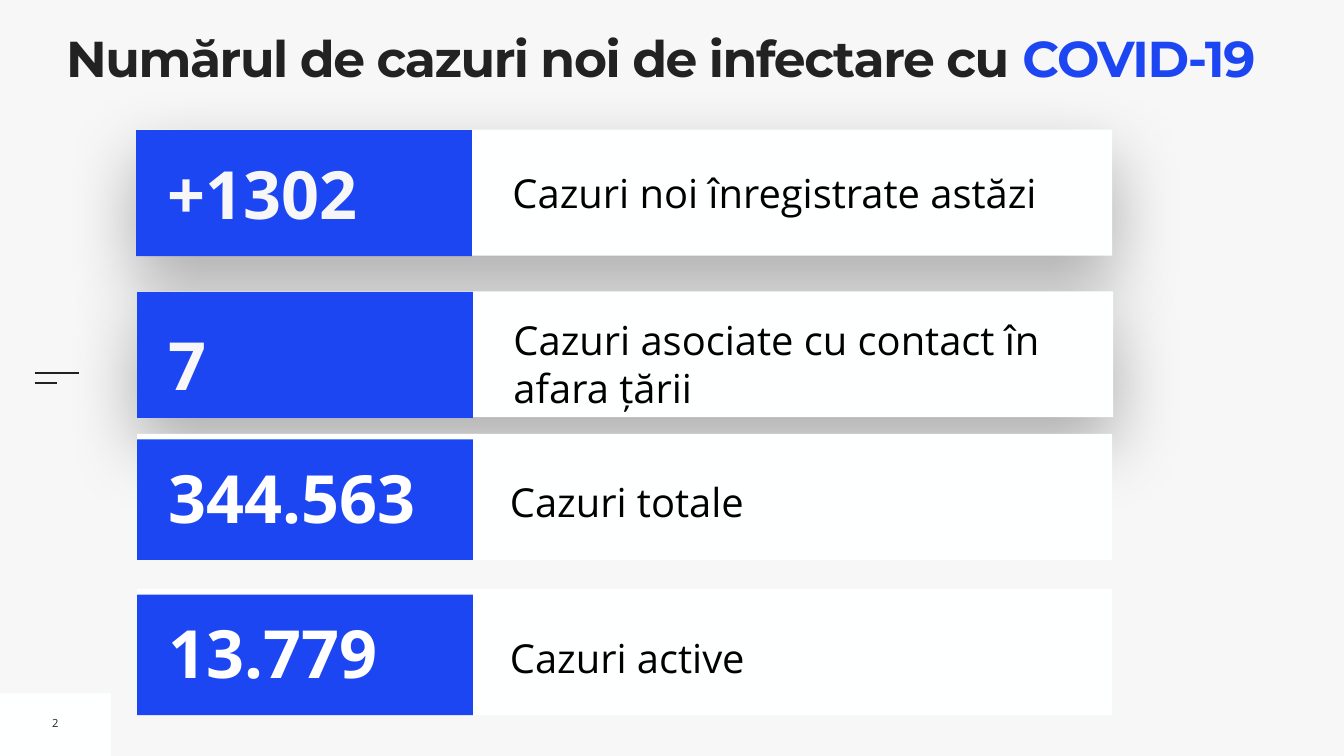
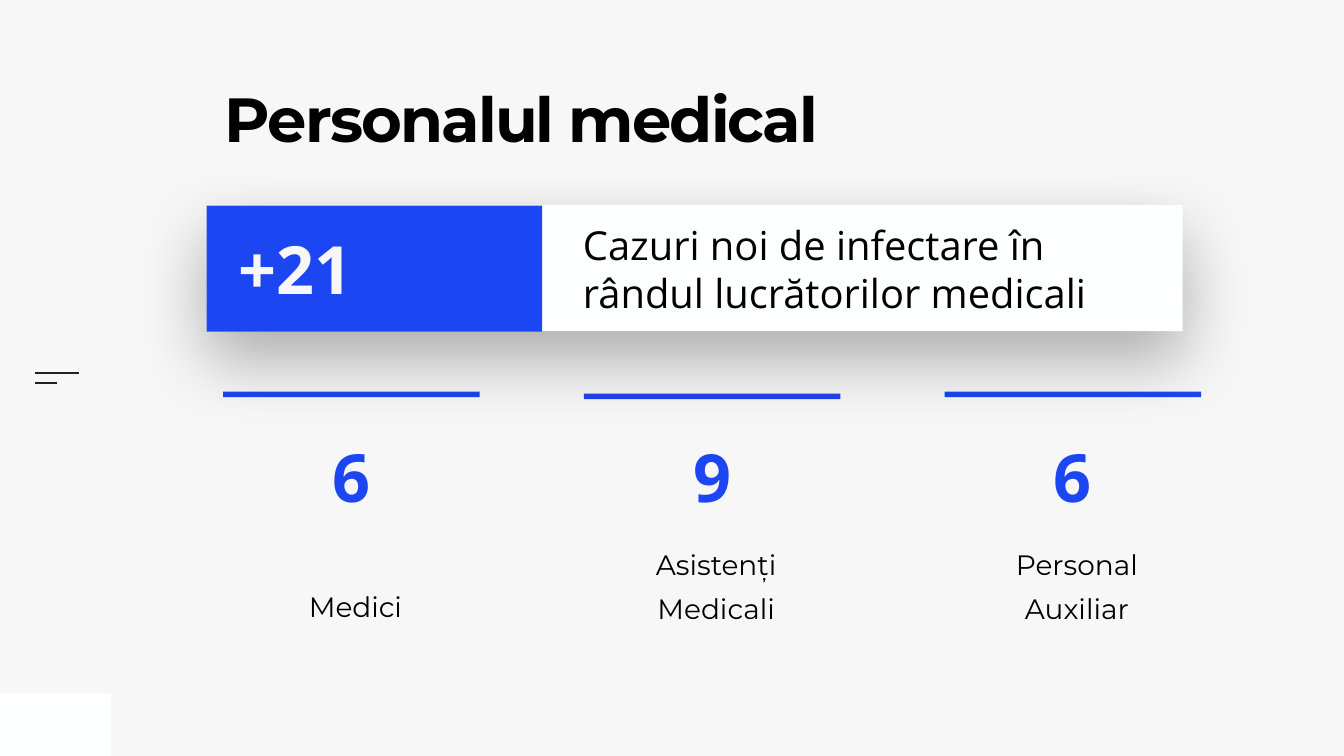
import pptx
import pptx.util
import pptx.dml.color
import pptx.enum.shapes
import pptx.enum.text
import pptx.oxml
import pptx.oxml.ns
import lxml.etree

Cm = pptx.util.Cm
Pt = pptx.util.Pt
RGBColor = pptx.dml.color.RGBColor
PP_ALIGN = pptx.enum.text.PP_ALIGN
MSO_ANCHOR = pptx.enum.text.MSO_ANCHOR

BLUE = RGBColor(0x1D, 0x46, 0xF3)
INK = RGBColor(0x22, 0x22, 0x22)
BLACK = RGBColor(0, 0, 0)
PAPER = RGBColor(0xF7, 0xF7, 0xF7)
PANEL = RGBColor(0xFE, 0xFF, 0xFF)
WHITE = RGBColor(0xFF, 0xFF, 0xFF)
HEADING_FONT = "Montserrat"
BODY_FONT = "Open Sans"
SHADOW = (
    f'<a:effectLst {pptx.oxml.ns.nsdecls("a")}>'
    f'<a:outerShdw blurRad="{Pt(100)}" dist="{Pt(40)}" dir="5400000" rotWithShape="0">'
    '<a:srgbClr val="000000"><a:alpha val="30000"/></a:srgbClr>'
    "</a:outerShdw></a:effectLst>"
)


def add_block(slide, left, top, width, height, fill):
    block = slide.shapes.add_shape(
        pptx.enum.shapes.MSO_SHAPE.RECTANGLE, Cm(left), Cm(top), Cm(width), Cm(height))
    block.shadow.inherit = False
    block.fill.solid()
    block.fill.fore_color.rgb = fill
    block.line.fill.background()
    return block


def write(shape, text, size, font, color, bold=False, align=PP_ALIGN.LEFT,
          anchor=MSO_ANCHOR.MIDDLE, insets=(0.25, 0.25, 0.25, 0.25), wrap=True):
    frame = shape.text_frame
    frame.word_wrap = wrap
    frame.vertical_anchor = anchor
    frame.margin_left, frame.margin_top, frame.margin_right, frame.margin_bottom = map(Cm, insets)
    paragraph = frame.paragraphs[0]
    paragraph.add_run().text = text
    paragraph.alignment = align
    paragraph.font.size = Pt(size)
    paragraph.font.name = font
    paragraph.font.bold = bold
    paragraph.font.color.rgb = color
    return paragraph


deck = pptx.Presentation()
deck.slide_width = Cm(67.74)
deck.slide_height = Cm(38.1)
cases = deck.slides.add_slide(deck.slide_layouts[6])
staff = deck.slides.add_slide(deck.slide_layouts[6])

for slide in (cases, staff):
    slide.background.fill.solid()
    slide.background.fill.fore_color.rgb = PAPER
    add_block(slide, 0, 34.95, 5.59, 3.15, PANEL)
    for right, height in ((3.99, 18.82), (2.87, 19.28)):
        dash = slide.shapes.add_connector(
            pptx.enum.shapes.MSO_CONNECTOR.STRAIGHT, Cm(1.75), Cm(height), Cm(right), Cm(height))
        dash.line.color.rgb = INK
        dash.line.width = Pt(3)
        lxml.etree.SubElement(dash._element.spPr, pptx.oxml.ns.qn("a:effectLst"))

page_number = cases.shapes.add_textbox(Cm(2.36), Cm(35.79), Cm(0.86), Cm(1.3))
write(page_number, "2", 16, BODY_FONT, INK, align=PP_ALIGN.CENTER, wrap=False)

titles = [
    (cases, (3.33, 1.98, 60.81, 4.01), "Numărul de cazuri noi de infectare cu ", "COVID-19", 72, INK, -200),
    (staff, (11.33, 4.75, 33.05, 6.93), "Personalul medical", "", 89, BLACK, -270),
]
for slide, box, text, accent, size, color, tracking in titles:
    title = slide.shapes.add_textbox(*map(Cm, box))
    heading = write(title, text, size, HEADING_FONT, color, bold=True,
                    anchor=MSO_ANCHOR.TOP, insets=(0, 0, 0, 0))
    heading.line_spacing = 0.8
    if accent:
        accent_run = heading.add_run()
        accent_run.text = accent
        accent_run.font.color.rgb = BLUE
    for run in heading.runs:
        run.font._element.set("spc", str(tracking))

COLUMN_WIDTH = 12.93
columns = [
    ("6", "Medici", 19.74, 19.74),
    ("9", "Asistenți Medicali", 19.84, 19.84),
    ("6", "Personal Auxiliar", 19.84, 19.74),
]
column_lefts = [11.25 + 18.18 * i for i in range(len(columns))]
for left, (count, role, card_top, rule_top) in zip(column_lefts, columns):
    card = add_block(staff, left, card_top, COLUMN_WIDTH, 13.87, PAPER)
    caption = write(card, role, 40, HEADING_FONT, BLACK, align=PP_ALIGN.CENTER,
                    anchor=MSO_ANCHOR.BOTTOM, insets=(1.4, 1.8, 1, 2.2))
    caption.line_spacing = 1.3
    caption.space_before = Pt(20)
    add_block(staff, left, rule_top, COLUMN_WIDTH, 0.28, BLUE)

BAND_HEIGHT = 6.35
NUMBER_HEIGHT = 4.57
bands = [
    (cases, 6.91, 29.69, "13.779", "Cazuri active", 3.18, 0, False),
    (cases, 6.86, 6.53, "+1302", "Cazuri noi înregistrate astăzi", 2.95, 0, True),
    (cases, 6.91, 14.68, "7", "Cazuri asociate cu contact în afara țării", 5.38, 0.48, True),
    (cases, 6.91, 21.87, "344.563", "Cazuri totale", 2.84, 0, False),
    (staff, 10.41, 10.34, "+21", "Cazuri noi de infectare în rândul lucrătorilor medicali", 5.38, 0, True),
]
for slide, left, top, count, text, label_height, shift, raised in bands:
    middle = top + BAND_HEIGHT / 2 + shift
    panel = add_block(slide, left, top, 49.2 if raised else 49.15, BAND_HEIGHT, PANEL)
    if raised:
        properties = panel._element.spPr
        properties.remove(properties.find(pptx.oxml.ns.qn("a:effectLst")))
        properties.append(pptx.oxml.parse_xml(SHADOW))
        label_offset, label_width, label_inset, label_rise, blue_drop = 18.72, 29.87, 0.25, 0, 0.03
    else:
        label_offset, label_width, label_inset, label_rise, blue_drop = 18.79, 29.41, 0, 0.11, 0.28

    label = slide.shapes.add_textbox(
        Cm(left + label_offset), Cm(middle - label_height / 2 - label_rise),
        Cm(label_width), Cm(label_height))
    label_line = write(label, text, 57, BODY_FONT, BLACK, insets=(label_inset,) * 4)
    if not raised:
        label_line.line_spacing = 1.3
        label_line.space_before = Pt(20)

    add_block(slide, left, top + blue_drop, 16.92, BAND_HEIGHT if raised else 6.07, BLUE)
    number = slide.shapes.add_textbox(
        Cm(left + 1.35), Cm(middle - NUMBER_HEIGHT / 2), Cm(15.32), Cm(NUMBER_HEIGHT))
    write(number, count, 95, BODY_FONT, PAPER if raised else WHITE, bold=True)

for left, (count, *_) in zip(column_lefts, columns):
    number = staff.shapes.add_textbox(Cm(left), Cm(21.69), Cm(COLUMN_WIDTH), Cm(NUMBER_HEIGHT))
    write(number, count, 95, BODY_FONT, BLUE, bold=True, align=PP_ALIGN.CENTER)

deck.save("out.pptx")
